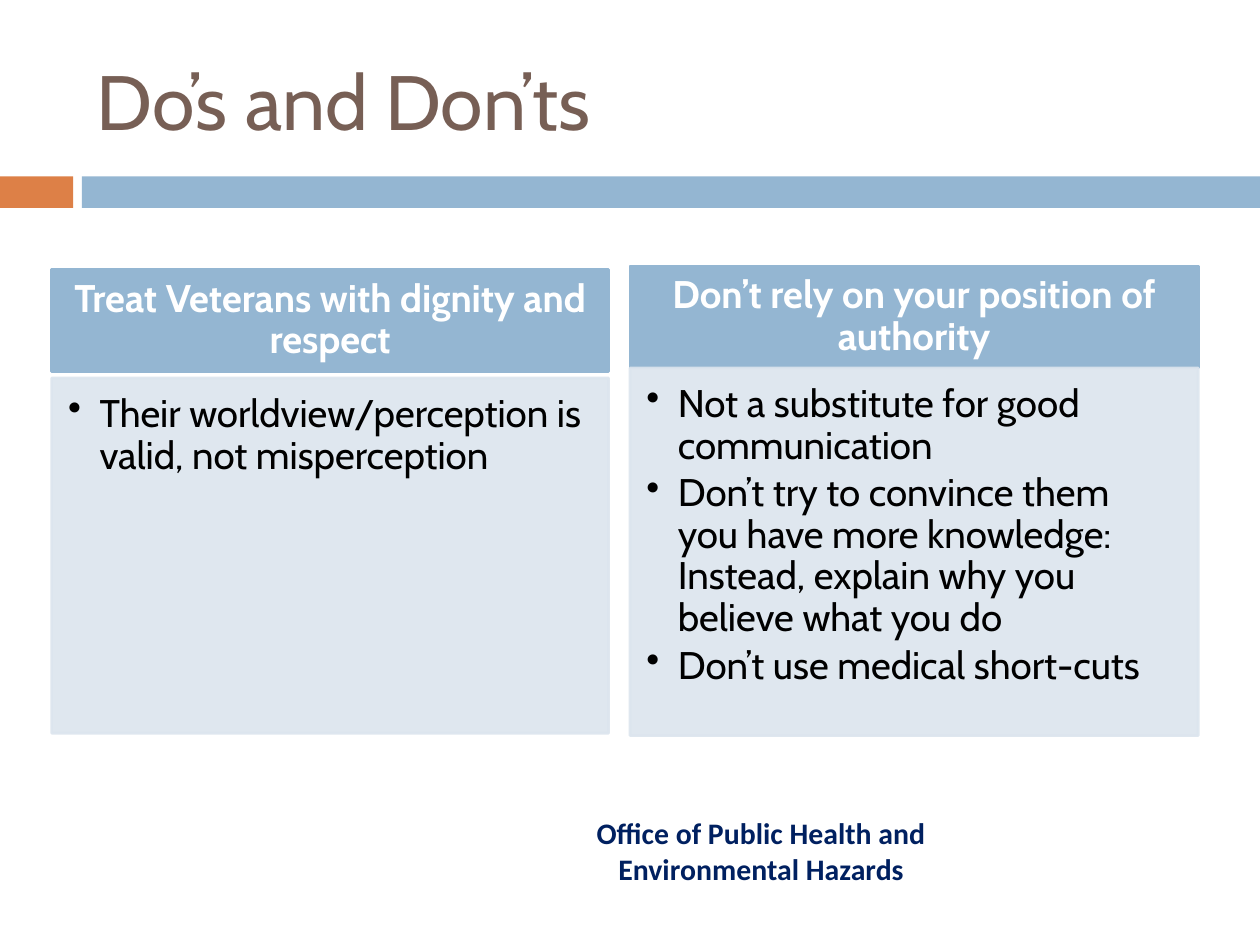
from dataclasses import dataclass

import lxml.etree
import pptx
import pptx.dml.color
import pptx.enum.shapes
import pptx.enum.text
import pptx.oxml.ns
import pptx.util

SLIDE_WIDTH = pptx.util.Inches(10)
SLIDE_HEIGHT = pptx.util.Inches(7.5)
BLUE, ORANGE, PALE = "94B6D2", "DD8047", "DCE5EE"
BROWN, NAVY, WHITE, BLACK = "775F55", "002060", "FFFFFF", "000000"
CENTER = pptx.enum.text.PP_ALIGN.CENTER
MIDDLE = pptx.enum.text.MSO_ANCHOR.MIDDLE
TOP = pptx.enum.text.MSO_ANCHOR.TOP


@dataclass(frozen=True)
class Area:
    """A region in percent of the slide's width and height."""
    left: float
    top: float
    width: float
    height: float

    def emu(self) -> tuple[int, int, int, int]:
        return (int(SLIDE_WIDTH * self.left / 100), int(SLIDE_HEIGHT * self.top / 100),
                int(SLIDE_WIDTH * self.width / 100), int(SLIDE_HEIGHT * self.height / 100))


@dataclass(frozen=True)
class TextStyle:
    size: float
    color: str
    font: str = "Cabin"
    bold: bool = False
    align: int = pptx.enum.text.PP_ALIGN.LEFT
    anchor: int = TOP
    insets: tuple[float, float, float, float] = (0.1, 0.05, 0.1, 0.05)
    line_spacing: float = 1.0
    space_after: float = 0
    bulleted: bool = False


@dataclass(frozen=True)
class Advice:
    heading: str
    points: tuple[str, ...]
    heading_area: Area
    points_area: Area


TITLE = TextStyle(44, BROWN, anchor=MIDDLE)
OFFICE = TextStyle(17, NAVY, font="Calibri", bold=True, align=CENTER)
HEADING = TextStyle(22, WHITE, bold=True, align=CENTER, anchor=MIDDLE,
                    insets=(0.17, 0.1, 0.17, 0.1), line_spacing=0.9)
POINTS = TextStyle(22, BLACK, insets=(0.13, 0.13, 0.17, 0.19),
                   line_spacing=0.9, space_after=3.5, bulleted=True)

ADVICE = (
    Advice("Treat Veterans with dignity and respect",
           ("Their worldview/perception is valid, not misperception",),
           Area(4.1, 28.53, 44.2, 10.8), Area(4.1, 40, 44.2, 37.6)),
    Advice("Don’t rely on your position of authority",
           ("Not a substitute for good communication",
            "Don’t try to convince them you have more knowledge: "
            "Instead, explain why you believe what you do",
            "Don’t use medical short-cuts"),
           Area(50, 28.13, 45.1, 10.8), Area(50, 38.93, 45.1, 38.93)),
)


def rgb(color: str) -> pptx.dml.color.RGBColor:
    return pptx.dml.color.RGBColor.from_string(color)


def add_bullet(paragraph, indent: float = 0.25) -> None:
    properties = paragraph._p.get_or_add_pPr()
    properties.set("marL", str(pptx.util.Inches(indent)))
    properties.set("indent", str(-pptx.util.Inches(indent)))
    bullet = lxml.etree.SubElement(properties, pptx.oxml.ns.qn("a:buChar"))
    bullet.set("char", "•")


def write(shape, lines: tuple[str, ...], style: TextStyle) -> None:
    frame = shape.text_frame
    frame.word_wrap = True
    frame.vertical_anchor = style.anchor
    (frame.margin_left, frame.margin_top,
     frame.margin_right, frame.margin_bottom) = map(pptx.util.Inches, style.insets)
    for index, line in enumerate(lines):
        paragraph = frame.paragraphs[0] if index == 0 else frame.add_paragraph()
        paragraph.text = line
        paragraph.alignment = style.align
        paragraph.line_spacing = style.line_spacing
        paragraph.space_after = pptx.util.Pt(style.space_after)
        if style.bulleted:
            add_bullet(paragraph)
        paragraph.font.name = style.font
        paragraph.font.size = pptx.util.Pt(style.size)
        paragraph.font.bold = style.bold
        paragraph.font.color.rgb = rgb(style.color)


def add_text(slide, area: Area, line: str, style: TextStyle) -> None:
    write(slide.shapes.add_textbox(*area.emu()), (line,), style)


def add_panel(slide, area: Area, color: str, outlined: bool = True, opacity: int = 100):
    panel = slide.shapes.add_shape(pptx.enum.shapes.MSO_SHAPE.RECTANGLE, *area.emu())
    panel.shadow.inherit = False
    panel.fill.solid()
    panel.fill.fore_color.rgb = rgb(color)
    if outlined:
        panel.line.color.rgb = rgb(color)
        panel.line.width = pptx.util.Pt(1.5)
    else:
        panel.line.fill.background()
    if opacity < 100:
        for paint in panel._element.spPr.iter(pptx.oxml.ns.qn("a:srgbClr")):
            alpha = lxml.etree.SubElement(paint, pptx.oxml.ns.qn("a:alpha"))
            alpha.set("val", str(opacity * 1000))
    return panel


def main() -> None:
    deck = pptx.Presentation()
    deck.slide_width, deck.slide_height = SLIDE_WIDTH, SLIDE_HEIGHT
    slide = deck.slides.add_slide(deck.slide_layouts[6])

    # Band under the title
    add_panel(slide, Area(0, 18.67, 5.8, 3.33), ORANGE, outlined=False)
    add_panel(slide, Area(6.5, 18.67, 93.5, 3.33), BLUE, outlined=False)

    # Office name and title
    add_text(slide, Area(45.8, 85.6, 29.2, 8.93),
             "Office of Public Health and Environmental Hazards", OFFICE)
    add_text(slide, Area(6.7, 3.33, 89.2, 14.4), "Do’s and Don’ts", TITLE)

    # Advice columns
    for advice in ADVICE:
        write(add_panel(slide, advice.heading_area, BLUE), (advice.heading,), HEADING)
        write(add_panel(slide, advice.points_area, PALE, opacity=90), advice.points, POINTS)

    deck.save("out.pptx")


if __name__ == "__main__":
    main()
